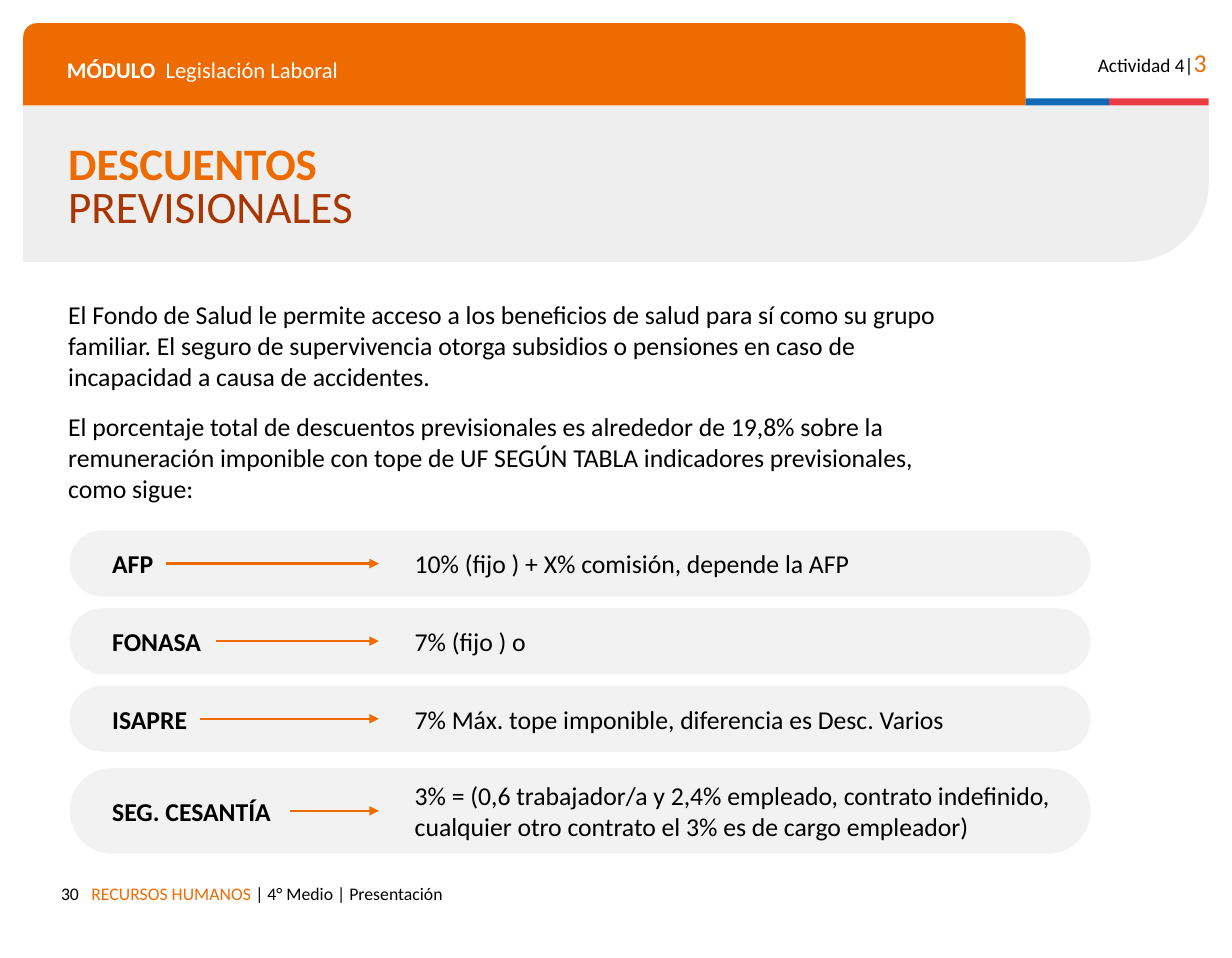
from pptx import Presentation
from pptx.dml.color import RGBColor as RGB
from pptx.enum.shapes import MSO_CONNECTOR as LINE, MSO_SHAPE as SHAPE
from pptx.enum.text import MSO_ANCHOR as ANCHOR, PP_ALIGN as ALIGN
from pptx.oxml.ns import qn
from pptx.util import Inches, Pt
from lxml.etree import SubElement

ORANGE = RGB(0xED, 0x6B, 0x00)
RUST = RGB(0xA9, 0x35, 0x01)
BLUE = RGB(0x0F, 0x69, 0xB4)
RED = RGB(0xEB, 0x3C, 0x46)
PALE = RGB(0xEE, 0xEE, 0xEE)
GRAY = RGB(0xF2, 0xF2, 0xF2)
BLACK = RGB(0, 0, 0)
WHITE = RGB(0xFF, 0xFF, 0xFF)

# Content: each paragraph is a list of (text, size, color, bold)
TITLE = [[("DESCUENTOS ", 28, ORANGE, True),
          ("PREVISIONALES", 28, RUST, False)]]
BODY = [
    "El Fondo de Salud le permite acceso a los beneficios de salud para sí "
    "como su grupo familiar. El seguro de supervivencia otorga subsidios o "
    "pensiones en caso de incapacidad a causa de accidentes.",
    "El porcentaje total de descuentos previsionales es alrededor de 19,8% "
    "sobre la remuneración imponible con tope de UF SEGÚN TABLA indicadores "
    "previsionales, como sigue:",
]
# Label, label width, detail, bar height
ROWS = [
    ("AFP", 0.56, "10% (fijo ) + X% comisión, depende la AFP", 0.57),
    ("FONASA", 0.99, "7% (fijo ) o", 0.57),
    ("ISAPRE", 0.86, "7% Máx. tope imponible, diferencia es Desc. Varios", 0.57),
    ("SEG. CESANTÍA", 1.63,
     "3% = (0,6 trabajador/a y 2,4% empleado, contrato indefinido, "
     "cualquier otro contrato el 3% es de cargo empleador)", 0.74),
]
TOPS = [4.58, 5.25, 5.92, 6.63]
TIP = 3.27

deck = Presentation()
deck.slide_width, deck.slide_height = Inches(10.63), Inches(8.27)
slide = deck.slides.add_slide(deck.slide_layouts[6])


def block(kind, box, color, *adjust):
    shape = slide.shapes.add_shape(kind, *map(Inches, box))
    shape.shadow.inherit = False
    shape.fill.solid()
    shape.fill.fore_color.rgb = color
    shape.line.fill.background()
    for i, value in enumerate(adjust):
        shape.adjustments[i] = value
    return shape


def write(box, paras, align=ALIGN.LEFT, anchor=ANCHOR.TOP, pad=0.1,
          wrap=True, space=1.0, after=0):
    shape = slide.shapes.add_textbox(*map(Inches, box))
    frame = shape.text_frame
    frame.word_wrap = wrap
    frame.vertical_anchor = anchor
    frame.margin_top = frame.margin_bottom = Inches(pad)
    for i, runs in enumerate(paras):
        para = frame.add_paragraph() if i else frame.paragraphs[0]
        para.alignment = align
        para.line_spacing = space
        para.space_after = Pt(after)
        for text, size, color, bold in runs:
            run = para.add_run()
            run.text = text
            font = run.font
            font.name, font.size, font.bold = "Calibri", Pt(size), bold
            font.color.rgb = color
    return shape


def arrow(label, y):
    line = slide.shapes.add_connector(
        LINE.STRAIGHT, label.left + label.width, Inches(y), Inches(TIP), Inches(y))
    line.begin_connect(label, 3)
    line.end_y = line.begin_y
    line.line.color.rgb = ORANGE
    line.line.width = Pt(1.5)
    SubElement(line.line._get_or_add_ln(), qn("a:tailEnd"), type="triangle")
    SubElement(line._element.spPr, qn("a:effectLst"))


# Header
band = block(SHAPE.ROUND_1_RECTANGLE, (0.2, 0.91, 10.23, 1.35), PALE, 0.5)
band.rotation = 180
band._element.spPr.xfrm.set("flipH", "1")
block(SHAPE.ROUND_2_SAME_RECTANGLE, (0.2, 0.2, 8.65, 0.71), ORANGE, 0.167, 0)
block(SHAPE.RECTANGLE, (8.85, 0.85, 0.72, 0.06), BLUE)
block(SHAPE.RECTANGLE, (9.57, 0.85, 0.86, 0.06), RED)
write((9.23, 0.3, 1.28, 0.38),
      [[("Actividad 4|", 12, BLACK, False), ("3", 16, ORANGE, False)]], ALIGN.RIGHT)
write((0.48, 0.38, 1, 0.35), [[("MÓDULO", 14, WHITE, True)]])
write((1.33, 0.38, 7.29, 0.35), [[("Legislación Laboral", 14, WHITE, False)]])

# Title and body
write((0.49, 1.11, 4.54, 1.04), TITLE, anchor=ANCHOR.MIDDLE, space=0.8)
write((0.49, 2.53, 7.95, 2.05), [[(text, 16, BLACK, False)] for text in BODY],
      pad=0.05, after=12)

# Deduction rows
for (name, width, detail, high), top in zip(ROWS, TOPS):
    mid = top + high / 2
    block(SHAPE.ROUNDED_RECTANGLE, (0.6, top, 8.81, high), GRAY, 0.5)
    label = write((0.87, mid - 0.185, width, 0.37), [[(name, 16, BLACK, True)]],
                  anchor=ANCHOR.MIDDLE, pad=0.05, wrap=False)
    write((3.48, mid - 0.32, 5.8, 0.64), [[(detail, 16, BLACK, False)]],
          anchor=ANCHOR.MIDDLE, pad=0.05)
    arrow(label, mid)

# Footer
write((0.2, 7.53, 0.58, 0.29), [[("30", 11, BLACK, False)]], ALIGN.RIGHT)
write((0.69, 7.53, 7.14, 0.38),
      [[("RECURSOS HUMANOS ", 11, ORANGE, False),
        ("| 4° Medio | Presentación", 11, BLACK, False)]])

deck.save("out.pptx")
